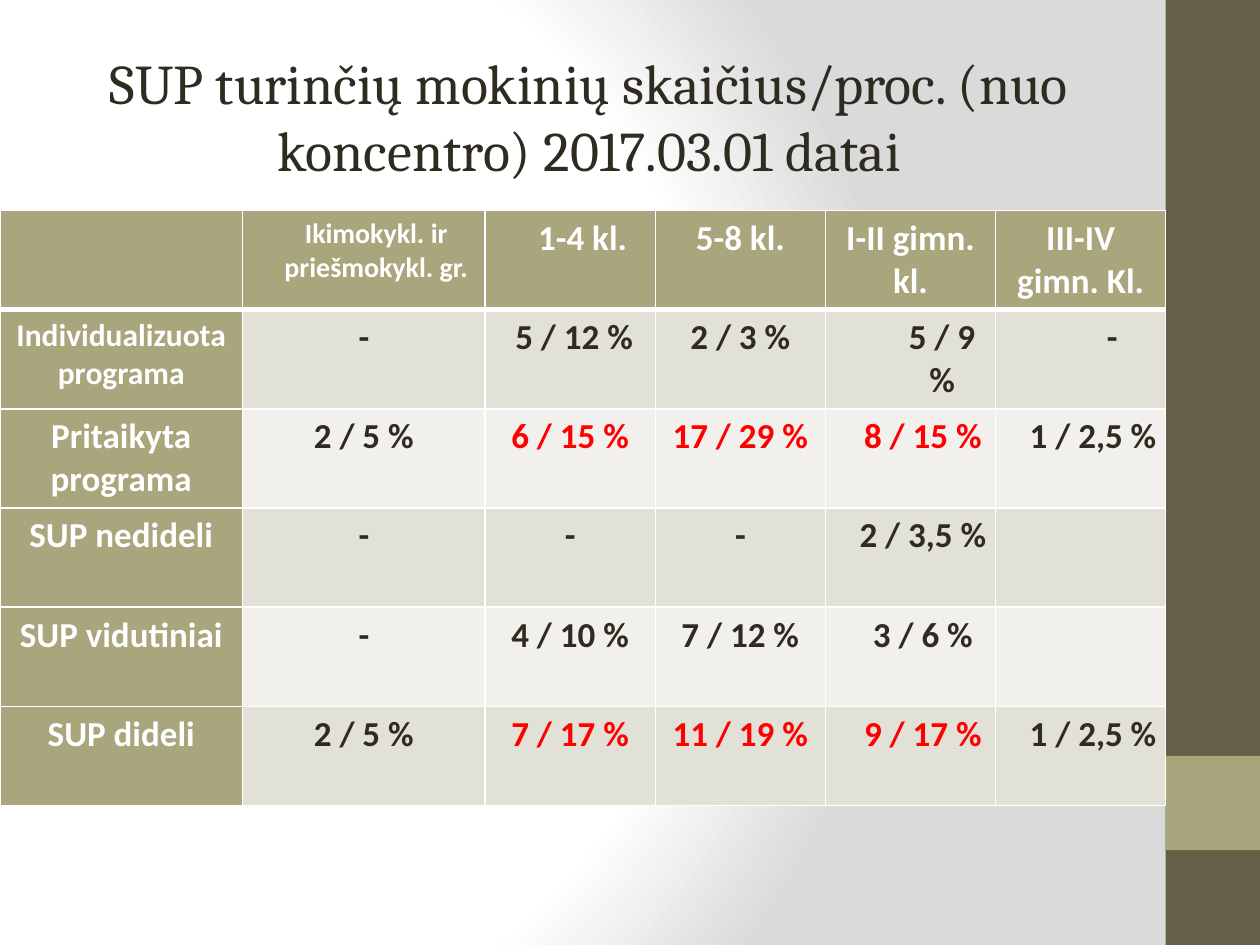
from dataclasses import dataclass

from pptx import Presentation
from pptx.dml.color import RGBColor
from pptx.enum.shapes import MSO_SHAPE as Preset
from pptx.enum.text import MSO_ANCHOR as Anchor, PP_ALIGN as Align
from pptx.oxml import parse_xml
from pptx.oxml.ns import nsdecls
from pptx.slide import Slide
from pptx.table import _Cell as TableCell
from pptx.util import Cm, Pt


@dataclass(frozen=True)
class Theme:
    ink: str = "2F2B20"
    white: str = "FFFFFF"
    alert: str = "FF0000"
    olive: str = "A9A57C"
    brown: str = "675E47"
    odd_row: str = "E2E1D7"
    even_row: str = "F1F0EC"
    glow_edge: str = "DADADA"
    heading_font: str = "Cambria"
    body_font: str = "Calibri"
    title_size: int = 32
    body_size: int = 20
    label_size: int = 18
    small_size: int = 16
    rule: int = 1
    header_rule: int = 3


@dataclass(frozen=True)
class Band:
    top: float
    height: float
    color: str


@dataclass(frozen=True)
class Entry:
    text: str = ""
    size: int = Theme.body_size
    color: str = Theme.ink
    indent: float = 0


THEME = Theme()
SLIDE_WIDTH, SLIDE_HEIGHT = 25.4, 19.05
SIDEBAR_LEFT = 23.5
TABLE_TOP = 4.24
COLUMN_WIDTHS = [4.89] * 2 + [3.43] * 4
ROW_HEIGHT = 2.0
CELL_MARGIN = 0.13
SHIFT, WIDE_SHIFT = 0.5, 1.27

BANDS = [Band(0, SLIDE_HEIGHT, THEME.brown), Band(15.24, 1.9, THEME.olive)]


def label(text: str, size: int = THEME.body_size, indent: float = 0) -> Entry:
    return Entry(text, size, THEME.white, indent)


def alert(text: str, indent: float = 0) -> Entry:
    return Entry(text, color=THEME.alert, indent=indent)


DASH = Entry("-")
ROWS = [
    [label(""), label("Ikimokykl. ir priešmokykl. gr.", THEME.small_size, SHIFT),
     label("1-4 kl.", indent=SHIFT), label("5-8 kl."),
     label("I-II gimn. kl."), label("III-IV gimn. Kl.")],
    [label("Individualizuota programa", THEME.label_size), DASH, Entry(" 5 / 12 %"),
     Entry("2 / 3 %"), Entry("5 / 9 %", indent=WIDE_SHIFT), Entry("-", indent=WIDE_SHIFT)],
    [label("Pritaikyta programa"), Entry("2 / 5 %"), alert("6 / 15 %"),
     alert("17 / 29 %"), alert("8 / 15 %", SHIFT), Entry("1 / 2,5 %", indent=SHIFT)],
    [label("SUP nedideli"), DASH, DASH, DASH, Entry("2 / 3,5 %", indent=SHIFT), Entry()],
    [label("SUP vidutiniai"), DASH, Entry("4 / 10 %"), Entry("7 / 12 %"),
     Entry("3 / 6 %", indent=SHIFT), Entry()],
    [label("SUP dideli"), Entry("2 / 5 %"), alert("7 / 17 %"), alert("11 / 19 %"),
     alert("9 / 17 %", SHIFT), Entry("1 / 2,5 %", indent=SHIFT)],
]


def paint_background(slide: Slide) -> None:
    stops = [(0, THEME.white), (75, THEME.white), (100, THEME.glow_edge)]
    stop_xml = "".join(
        f'<a:gs pos="{position * 1000}"><a:srgbClr val="{color}"/></a:gs>'
        for position, color in stops
    )
    background = parse_xml(
        f'<p:bg {nsdecls("p", "a")}><p:bgPr><a:gradFill rotWithShape="1">'
        f'<a:gsLst>{stop_xml}</a:gsLst><a:path path="circle">'
        '<a:fillToRect l="20000" t="50000" r="100000" b="50000"/></a:path>'
        '</a:gradFill><a:effectLst/></p:bgPr></p:bg>'
    )
    slide.element.cSld.insert(0, background)


def add_band(slide: Slide, band: Band) -> None:
    block = slide.shapes.add_shape(
        Preset.RECTANGLE, Cm(SIDEBAR_LEFT), Cm(band.top),
        Cm(SLIDE_WIDTH - SIDEBAR_LEFT), Cm(band.height),
    )
    block.shadow.inherit = False
    block.fill.solid()
    block.fill.fore_color.rgb = RGBColor.from_string(band.color)
    block.line.fill.background()


def add_title(slide: Slide, text: str) -> None:
    frame = slide.shapes.add_textbox(Cm(1.3), Cm(0.74), Cm(21.16), Cm(3.18)).text_frame
    frame.word_wrap = True
    frame.vertical_anchor = Anchor.MIDDLE
    heading = frame.paragraphs[0]
    heading.alignment = Align.CENTER
    run = heading.add_run()
    run.text = text
    run.font.name = THEME.heading_font
    run.font.size = Pt(THEME.title_size)
    run.font.color.rgb = RGBColor.from_string(THEME.ink)


def set_borders(cell: TableCell, top: int, bottom: int) -> None:
    properties = cell._tc.get_or_add_tcPr()
    widths = {"L": THEME.rule, "R": THEME.rule, "T": top, "B": bottom}
    for position, (side, width) in enumerate(widths.items()):
        properties.insert(position, parse_xml(
            f'<a:ln{side} {nsdecls("a")} w="{Pt(width)}"><a:solidFill>'
            f'<a:srgbClr val="{THEME.white}"/></a:solidFill></a:ln{side}>'
        ))


def fill_cell(cell: TableCell, entry: Entry, fill: str) -> None:
    cell.margin_left = cell.margin_right = Cm(CELL_MARGIN)
    cell.margin_top = cell.margin_bottom = Cm(CELL_MARGIN)
    cell.fill.solid()
    cell.fill.fore_color.rgb = RGBColor.from_string(fill)
    if not entry.text:
        return
    line = cell.text_frame.paragraphs[0]
    line.alignment = Align.CENTER
    if entry.indent:
        line._p.get_or_add_pPr().set("marL", str(Cm(entry.indent)))
    run = line.add_run()
    run.text = entry.text
    run.font.name = THEME.body_font
    run.font.size = Pt(entry.size)
    run.font.bold = True
    run.font.color.rgb = RGBColor.from_string(entry.color)


def add_pupil_table(slide: Slide, rows: list[list[Entry]]) -> None:
    table = slide.shapes.add_table(
        len(rows), len(COLUMN_WIDTHS), Cm(0), Cm(TABLE_TOP),
        Cm(sum(COLUMN_WIDTHS)), Cm(ROW_HEIGHT * len(rows)),
    ).table
    for column, width in zip(table.columns, COLUMN_WIDTHS):
        column.width = Cm(width)
    for r, entries in enumerate(rows):
        table.rows[r].height = Cm(ROW_HEIGHT)
        row_fill = THEME.odd_row if r % 2 else THEME.even_row
        top = THEME.header_rule if r == 1 else THEME.rule
        bottom = THEME.header_rule if r == 0 else THEME.rule
        for c, entry in enumerate(entries):
            cell = table.cell(r, c)
            fill_cell(cell, entry, THEME.olive if r == 0 or c == 0 else row_fill)
            set_borders(cell, top, bottom)


def main() -> None:
    deck = Presentation()
    deck.slide_width, deck.slide_height = Cm(SLIDE_WIDTH), Cm(SLIDE_HEIGHT)
    slide = deck.slides.add_slide(deck.slide_layouts[6])
    paint_background(slide)
    for band in BANDS:
        add_band(slide, band)
    add_title(slide, "SUP turinčių mokinių skaičius/proc. (nuo koncentro) 2017.03.01 datai")
    add_pupil_table(slide, ROWS)
    deck.save("out.pptx")


if __name__ == "__main__":
    main()
